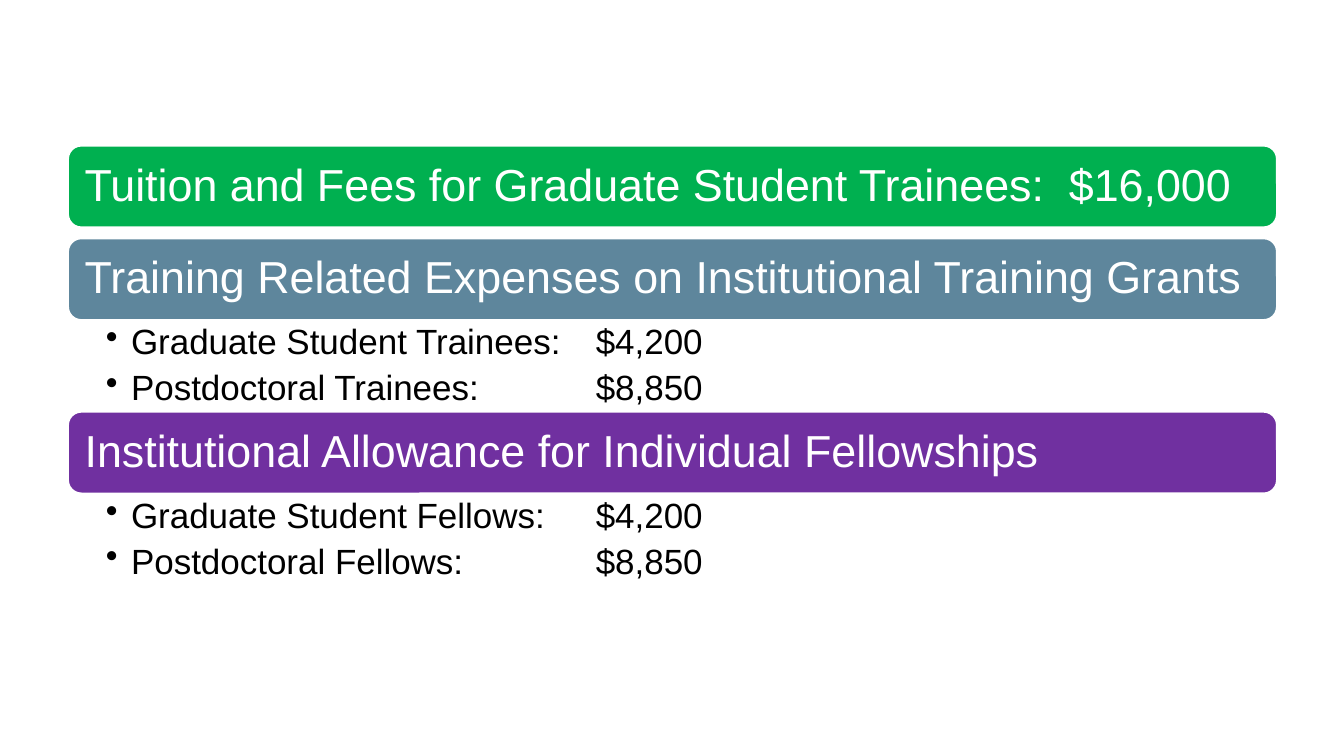
from dataclasses import dataclass

from lxml import etree
from pptx import Presentation
from pptx import util as u
from pptx.dml.color import RGBColor
from pptx.enum import shapes, text
from pptx.oxml import ns


@dataclass(frozen=True)
class Theme:
    font: str = "Arial"
    heading_size: int = 32
    item_size: int = 25
    light: str = "FFFFFF"
    dark: str = "000000"
    green: str = "00B050"
    slate: str = "5E869C"
    purple: str = "7030A0"


THEME = Theme()
BAR_HEIGHT, LIST_HEIGHT, GAP = 0.82, 0.9, 0.1
INDENT, AMOUNT_TAB = 0.25, 4.86

SECTIONS = [
    ("Tuition and Fees for Graduate Student Trainees:  $16,000", THEME.green, []),
    ("Training Related Expenses on Institutional Training Grants", THEME.slate,
     [("Graduate Student Trainees:", "$4,200"), ("Postdoctoral Trainees:", "$8,850")]),
    ("Institutional Allowance for Individual Fellowships", THEME.purple,
     [("Graduate Student Fellows:", "$4,200"), ("Postdoctoral Fellows:", "$8,850")]),
]


def apply_format(target, values):
    for name, value in values.items():
        setattr(target, name, value)


def set_frame(frame, anchor, left, top, right, bottom):
    apply_format(frame, {
        "word_wrap": True, "vertical_anchor": anchor,
        "margin_left": u.Inches(left), "margin_top": u.Inches(top),
        "margin_right": u.Inches(right), "margin_bottom": u.Inches(bottom),
    })


def style_paragraph(paragraph, size, color, space_after=0):
    apply_format(paragraph, {
        "alignment": text.PP_ALIGN.LEFT, "line_spacing": 0.9,
        "space_after": u.Pt(space_after),
    })
    apply_format(paragraph.font, {"name": THEME.font, "size": u.Pt(size)})
    paragraph.font.color.rgb = RGBColor.from_string(color)


def add_bullet_and_tab(paragraph):
    properties = paragraph._p.get_or_add_pPr()
    properties.set("marL", str(u.Inches(INDENT)))
    properties.set("indent", str(-u.Inches(INDENT)))
    etree.SubElement(properties, ns.qn("a:buChar"), char="•")
    tabs = etree.SubElement(properties, ns.qn("a:tabLst"))
    etree.SubElement(tabs, ns.qn("a:tab"), pos=str(u.Inches(AMOUNT_TAB)), algn="l")


def add_heading_bar(slide, left, top, width, height, heading, color):
    shape = slide.shapes.add_shape(
        shapes.MSO_SHAPE.ROUNDED_RECTANGLE,
        *(u.Inches(length) for length in (left, top, width, height)))
    shape.shadow.inherit = False
    shape.fill.solid()
    shape.fill.fore_color.rgb = RGBColor.from_string(color)
    shape.line.color.rgb = RGBColor.from_string(THEME.light)
    shape.line.width = u.Pt(2)
    set_frame(shape.text_frame, text.MSO_ANCHOR.MIDDLE, 0.13, 0.13, 0.13, 0.13)
    paragraph = shape.text_frame.paragraphs[0]
    paragraph.text = heading
    style_paragraph(paragraph, THEME.heading_size, THEME.light)


def add_amount_list(slide, left, top, width, height, items):
    box = slide.shapes.add_textbox(
        *(u.Inches(length) for length in (left, top, width, height)))
    frame = box.text_frame
    set_frame(frame, text.MSO_ANCHOR.TOP, 0.38, 0.04, 0.25, 0.04)
    for index, (label, amount) in enumerate(items):
        paragraph = frame.add_paragraph() if index else frame.paragraphs[0]
        paragraph.text = f"{label}\t{amount}"
        add_bullet_and_tab(paragraph)
        style_paragraph(paragraph, THEME.item_size, THEME.dark, space_after=5.8)


def add_sections(slide, left, top, width):
    # Each bar is followed by its list, or by a small gap
    for heading, color, items in SECTIONS:
        add_heading_bar(slide, left, top, width, BAR_HEIGHT, heading, color)
        top += BAR_HEIGHT
        if items:
            add_amount_list(slide, left, top, width, LIST_HEIGHT, items)
        top += LIST_HEIGHT if items else GAP


def main():
    presentation = Presentation()
    presentation.slide_width = u.Inches(13.33)
    presentation.slide_height = u.Inches(7.5)
    slide = presentation.slides.add_slide(presentation.slide_layouts[6])
    add_sections(slide, 0.67, 1.44, 12)
    presentation.save("out.pptx")


if __name__ == "__main__":
    main()
